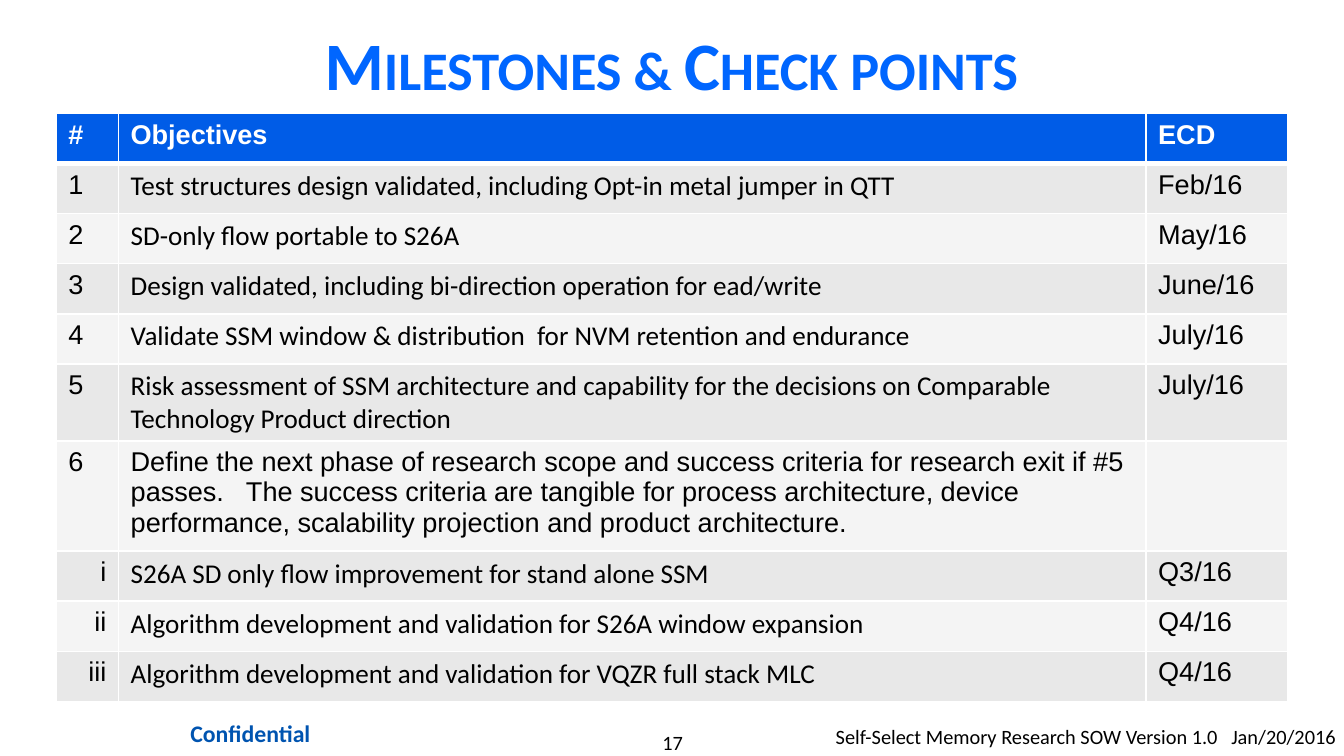
from dataclasses import dataclass

from lxml.etree import SubElement
from pptx import Presentation
from pptx.dml.color import RGBColor
from pptx.enum.text import MSO_ANCHOR, MSO_AUTO_SIZE, PP_ALIGN
from pptx.oxml.ns import qn
from pptx.util import Inches, Pt

SLIDE_W, SLIDE_H = 11, 6.19


@dataclass(frozen=True)
class Theme:
    title_color: str = "0066FF"
    header_fill: str = "005CE7"
    bands: tuple = ("E8E8E8", "F4F4F4")
    ink: str = "000000"
    paper: str = "FFFFFF"
    notice: str = "0054B0"
    text_font: str = "Calibri"
    label_font: str = "Arial"
    title_size: int = 40
    notice_size: int = 14
    table_size: int = 16
    footer_size: int = 12
    rule: float = 1
    header_rule: float = 3


THEME = Theme()

COLUMNS = (0.51, 8.41, 1.16)
ROW_HEIGHT = 0.41  # least height; rows with more lines grow
HEADER = ("#", "Objectives", "ECD")

# Number, objective, expected completion date
MILESTONES = (
    ("1", "Test structures design validated, including Opt-in metal jumper in QTT", "Feb/16"),
    ("2", "SD-only flow portable to S26A", "May/16"),
    ("3", "Design validated, including bi-direction operation for ead/write", "June/16"),
    ("4", "Validate SSM window & distribution  for NVM retention and endurance", "July/16"),
    ("5", "Risk assessment of SSM architecture and capability for the decisions on "
          "Comparable Technology Product direction", "July/16"),
    ("6", "Define the next phase of research scope and success criteria for research exit "
          "if #5 passes.   The success criteria are tangible for process architecture, device "
          "performance, scalability projection and product architecture.", ""),
    ("i", "S26A SD only flow improvement for stand alone SSM", "Q3/16"),
    ("ii", "Algorithm development and validation for S26A window expansion", "Q4/16"),
    ("iii", "Algorithm development and validation for VQZR full stack MLC", "Q4/16"),
)


def write(frame, text, size, color, font, bold=False, align=PP_ALIGN.LEFT):
    """Put one formatted paragraph in a text frame."""
    paragraph = frame.paragraphs[0]
    paragraph.text = text
    paragraph.alignment = align
    paragraph.font.size = Pt(size)
    paragraph.font.bold = bold
    paragraph.font.name = font
    paragraph.font.color.rgb = RGBColor.from_string(color)
    return paragraph


def add_title(slide, text):
    title = slide.shapes.title
    title.left, title.top = Inches(0.82), Inches(0.14)
    title.width, title.height = Inches(SLIDE_W * 0.85), Inches(0.76)
    frame = title.text_frame
    frame.auto_size = MSO_AUTO_SIZE.NONE
    frame.vertical_anchor = MSO_ANCHOR.MIDDLE
    paragraph = write(frame, text, THEME.title_size, THEME.title_color,
                      THEME.text_font, True, PP_ALIGN.CENTER)
    paragraph.runs[0].font._element.set("cap", "small")


def add_footer(slide, text, box, inset=(0, 0), size=THEME.footer_size,
               color=THEME.ink, bold=False, align=PP_ALIGN.CENTER):
    frame = slide.shapes.add_textbox(*map(Inches, box)).text_frame
    frame.word_wrap = True
    frame.margin_left = frame.margin_right = Inches(inset[0])
    frame.margin_top = frame.margin_bottom = Inches(inset[1])
    write(frame, text, size, color, THEME.text_font, bold, align)


def draw_borders(cell, top, bottom):
    properties = cell._tc.get_or_add_tcPr()
    widths = {"lnL": THEME.rule, "lnR": THEME.rule, "lnT": top, "lnB": bottom}
    for side, width in widths.items():
        line = SubElement(properties, qn(f"a:{side}"), w=str(Pt(width)))
        fill = SubElement(line, qn("a:solidFill"))
        SubElement(fill, qn("a:srgbClr"), val=THEME.paper)


def style_cell(cell, text, row, fill, color, font, bold, align=PP_ALIGN.LEFT):
    draw_borders(cell,
                 top=THEME.header_rule if row == 1 else THEME.rule,
                 bottom=THEME.header_rule if row == 0 else THEME.rule)
    cell.fill.solid()
    cell.fill.fore_color.rgb = RGBColor.from_string(fill)
    write(cell.text_frame, text, THEME.table_size, color, font, bold, align)


def add_milestones(slide):
    row_count = len(MILESTONES) + 1
    table = slide.shapes.add_table(
        row_count, len(COLUMNS), Inches(0.46), Inches(0.93),
        Inches(sum(COLUMNS)), Inches(row_count * ROW_HEIGHT)).table
    for column, width in zip(table.columns, COLUMNS):
        column.width = Inches(width)
    for row in table.rows:
        row.height = Inches(ROW_HEIGHT)

    # Header row
    for col, heading in enumerate(HEADER):
        style_cell(table.cell(0, col), heading, 0, THEME.header_fill,
                   THEME.paper, THEME.label_font, True)

    # Banded rows; roman sub-steps sit at the right of the number column
    for row, (number, objective, date) in enumerate(MILESTONES, 1):
        band = THEME.bands[(row - 1) % 2]
        number_align = PP_ALIGN.LEFT if number.isdigit() else PP_ALIGN.RIGHT
        # The undated step introduces the sub-steps in the label font
        objective_font = THEME.text_font if date else THEME.label_font
        entries = ((number, THEME.label_font, number_align),
                   (objective, objective_font, PP_ALIGN.LEFT),
                   (date, THEME.label_font, PP_ALIGN.LEFT))
        for col, (text, font, align) in enumerate(entries):
            style_cell(table.cell(row, col), text, row, band, THEME.ink,
                       font, False, align)


def main():
    deck = Presentation()
    deck.slide_width, deck.slide_height = Inches(SLIDE_W), Inches(SLIDE_H)
    slide = deck.slides.add_slide(deck.slide_layouts[5])

    # Footer: page number, document version, notice
    add_footer(slide, "17", (4.54, 5.98, 1.93, 0.2))
    add_footer(slide, "Self-Select Memory Research SOW Version 1.0   Jan/20/2016",
               (6.84, 5.88, 4.16, 0.3), (0, 0.05), align=PP_ALIGN.LEFT)
    add_footer(slide, "Confidential", (1.27, 5.84, 1.56, 0.34), (0.1, 0.05),
               THEME.notice_size, THEME.notice, True)

    add_title(slide, "Milestones & Check points")
    add_milestones(slide)
    deck.save("out.pptx")


if __name__ == "__main__":
    main()
